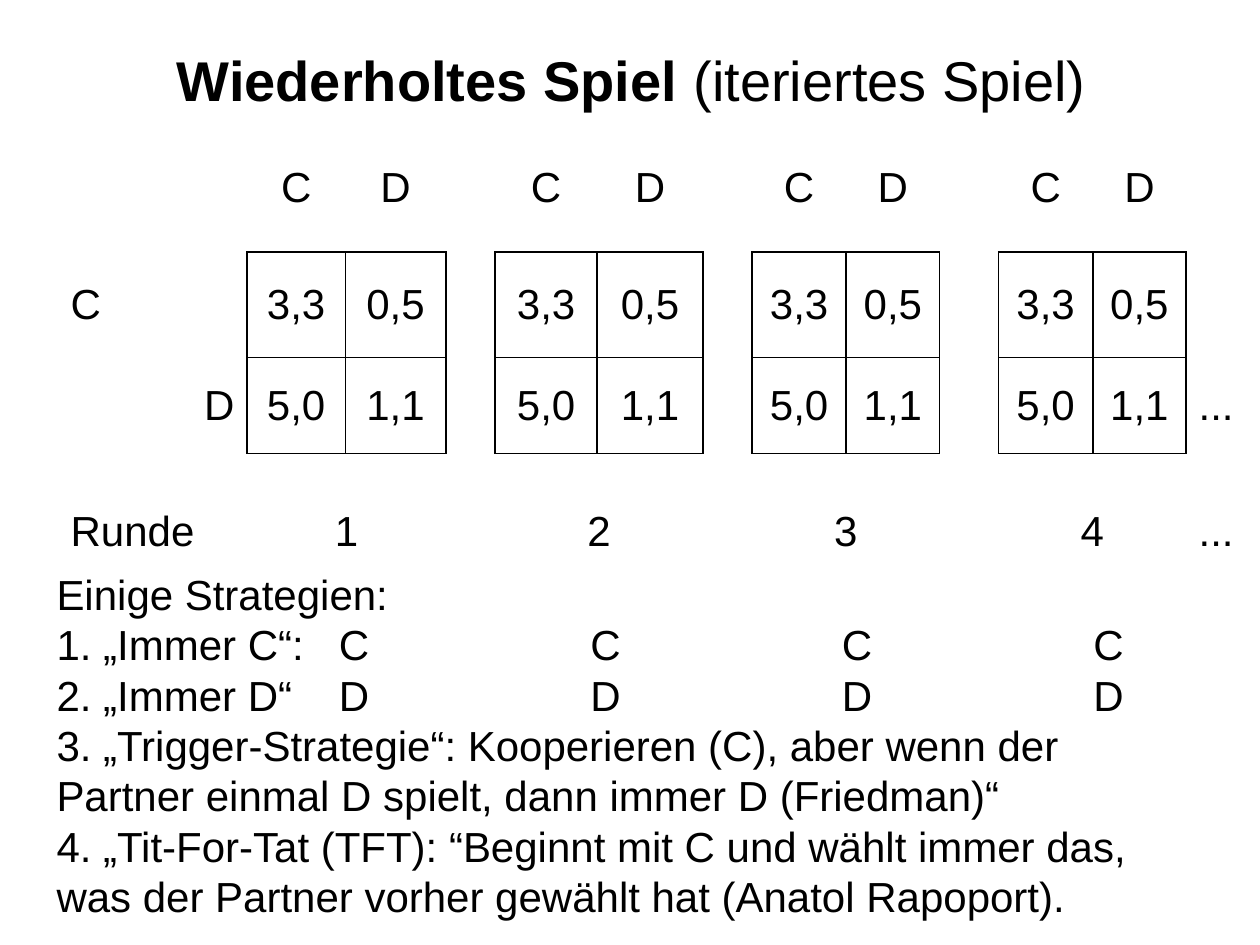
from lxml import etree
from pptx import Presentation
from pptx import util as u
from pptx.dml import color
from pptx.enum import text
from pptx.oxml import ns

BLACK = "000000"
TITLE = [("Wiederholtes Spiel", True), (" (iteriertes Spiel)", False)]
MOVES = ["C", "D"]
PAYOFFS = [["3,3", "0,5"], ["5,0", "1,1"]]
ROUND_LABEL = "Runde"
MORE = "..."
ROUND_WIDTHS = [(1.98, 2.03), (2.06, 2.13), (1.9, 1.88), (1.9, 1.88)]
LABEL_WIDTH = 3.81
GAP_WIDTHS = [0.99, 0.99, 1.19, 1.42]
ROW_HEIGHTS = [2.57, 2.13, 1.93, 3.18]
FIRST_TAB, TAB_STEP = 5.69, 5.07
STRATEGIES = [
    ("Einige Strategien:", ""),
    ("1. „Immer C“:", "CCCC"),
    ("2. „Immer D“", "DDDD"),
    ("3. „Trigger-Strategie“: Kooperieren (C), aber wenn der Partner einmal D spielt, "
     "dann immer D (Friedman)“", ""),
    ("4. „Tit-For-Tat (TFT): “Beginnt mit C und wählt immer das, was der Partner "
     "vorher gewählt hat (Anatol Rapoport).", ""),
]
NO_STYLE = "{2D5ABB26-0587-4C30-8999-92F81FD0307C}"
LEFT, CENTER, RIGHT = text.PP_ALIGN.LEFT, text.PP_ALIGN.CENTER, text.PP_ALIGN.RIGHT
MIDDLE, TOP = text.MSO_ANCHOR.MIDDLE, text.MSO_ANCHOR.TOP


def rgb(value):
    return color.RGBColor.from_string(value)


def apply(target, values):
    for name, value in values.items():
        setattr(target, name, value)


def add_span(para, words, size=24, bold=False):
    span = para.add_run()
    span.text = words
    apply(span.font, {"name": "Arial", "size": u.Pt(size), "bold": bold})
    span.font.color.rgb = rgb(BLACK)


def add_box(page, left, top, width, height, anchor):
    box = page.shapes.add_textbox(u.Cm(left), u.Cm(top), u.Cm(width), u.Cm(height))
    apply(box.text_frame, {"word_wrap": True, "vertical_anchor": anchor})
    return box.text_frame


def write_cell(cell, words, align=CENTER):
    para = cell.text_frame.paragraphs[0]
    para.alignment = align
    add_span(para, words)


def add_borders(cell):
    properties = cell._tc.get_or_add_tcPr()
    for index, side in enumerate(["lnL", "lnR", "lnT", "lnB"]):
        line = etree.Element(ns.qn(f"a:{side}"), w=str(u.Pt(1)))
        fill = etree.SubElement(line, ns.qn("a:solidFill"))
        etree.SubElement(fill, ns.qn("a:srgbClr"), val=BLACK)
        properties.insert(index, line)


def add_tabs(para, count):
    tabs = etree.SubElement(para._p.get_or_add_pPr(), ns.qn("a:tabLst"))
    for index in range(count):
        position = u.Cm(FIRST_TAB + index * TAB_STEP)
        etree.SubElement(tabs, ns.qn("a:tab"), pos=str(int(position)), algn="l")


def add_games(page):
    widths = [LABEL_WIDTH]
    for pair, gap in zip(ROUND_WIDTHS, GAP_WIDTHS):
        widths += [*pair, gap]
    frame = page.shapes.add_table(len(ROW_HEIGHTS), len(widths), u.Cm(1.17), u.Cm(2.51),
                                  u.Cm(sum(widths)), u.Cm(sum(ROW_HEIGHTS)))
    table = frame.table
    apply(table, {"first_row": False, "horz_banding": False})
    table._tbl.tblPr.find(ns.qn("a:tableStyleId")).text = NO_STYLE
    for column, width in zip(table.columns, widths):
        column.width = u.Cm(width)
    for row, height in zip(table.rows, ROW_HEIGHTS):
        row.height = u.Cm(height)
    for cell in table.iter_cells():
        cell.vertical_anchor = MIDDLE
        cell.fill.background()

    last = len(widths) - 1
    for row, words, align in [(1, MOVES[0], LEFT), (2, MOVES[1], RIGHT), (3, ROUND_LABEL, LEFT)]:
        write_cell(table.cell(row, 0), words, align)
    for row in (2, 3):
        write_cell(table.cell(row, last), MORE, LEFT)
    for game in range(len(ROUND_WIDTHS)):
        start = 1 + 3 * game
        for offset, move in enumerate(MOVES):
            write_cell(table.cell(0, start + offset), move)
            for row, payoffs in enumerate(PAYOFFS, 1):
                cell = table.cell(row, start + offset)
                write_cell(cell, payoffs[offset])
                add_borders(cell)
        number = table.cell(3, start)
        number.merge(table.cell(3, start + 1))
        write_cell(number, str(game + 1))


def add_strategies(page):
    frame = add_box(page, 0.89, 11.33, 23.6, 7.37, TOP)
    for index, (words, moves) in enumerate(STRATEGIES):
        para = frame.add_paragraph() if index else frame.paragraphs[0]
        if moves:
            add_tabs(para, len(moves))
        add_span(para, "\t".join([words, *moves]))


def main():
    deck = Presentation()
    apply(deck, {"slide_width": u.Cm(25.4), "slide_height": u.Cm(19.05)})
    page = deck.slides.add_slide(deck.slide_layouts[6])
    heading = add_box(page, 1.3, 0, 22.86, 3.18, MIDDLE).paragraphs[0]
    heading.alignment = CENTER
    for words, bold in TITLE:
        add_span(heading, words, 32, bold)
    add_games(page)
    add_strategies(page)
    deck.save("out.pptx")


if __name__ == "__main__":
    main()
